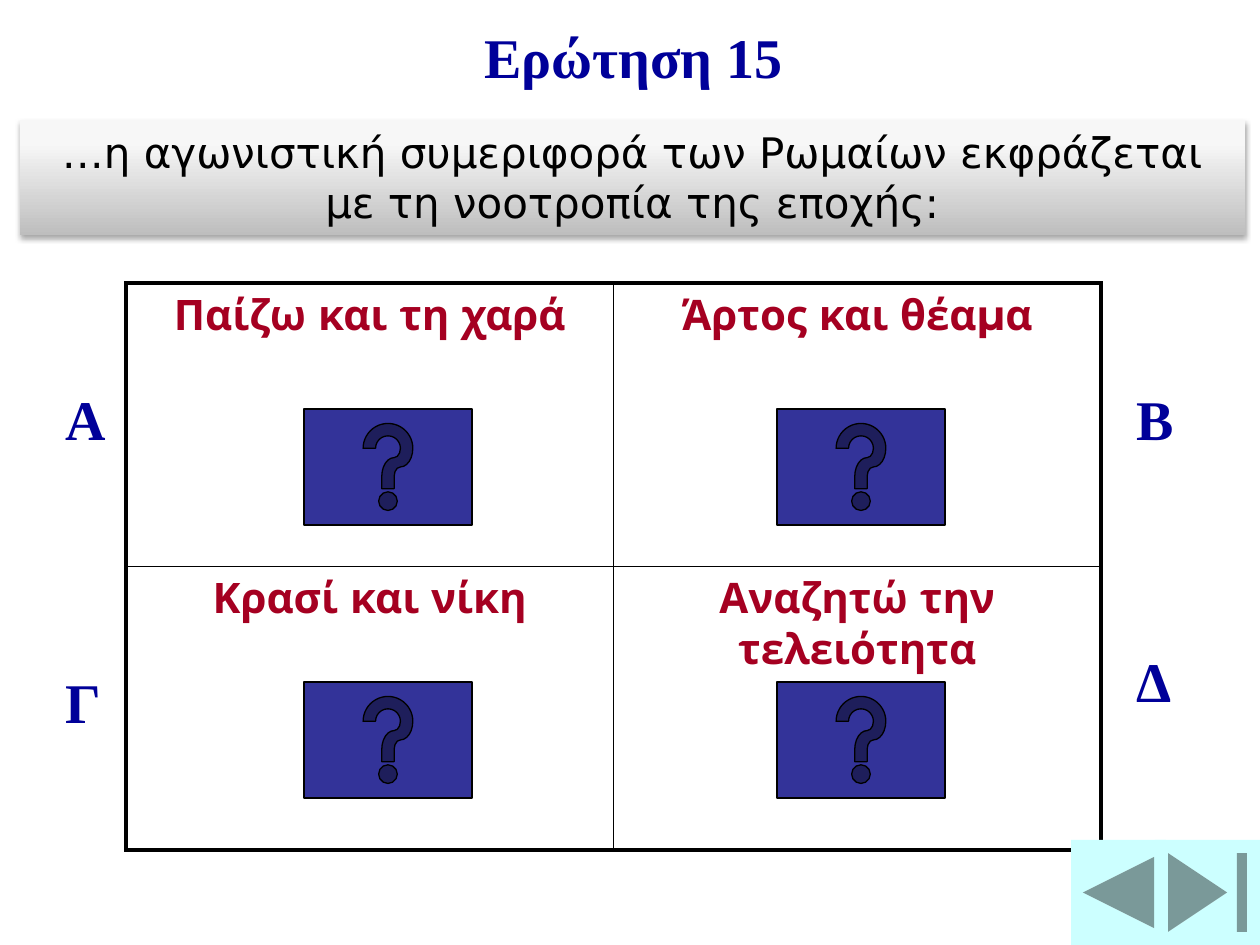
import lxml.etree
import pptx
import pptx.dml.color
import pptx.enum.shapes
import pptx.enum.text
import pptx.oxml
import pptx.oxml.ns
import pptx.util

EMU_PER_PX = 914400 / 126
COLORS = {
    "navy": "000099", "crimson": "A50021", "indigo": "333399",
    "aqua": "CCFFFF", "black": "000000", "white": "FFFFFF",
}
BANNER_STOPS = [(0, "BEBEBE"), (80, "F7F7F7"), (100, "F8F8F8")]
ANSWERS = [
    ["Παίζω και τη χαρά", "Άρτος και θέαμα"],
    ["Κρασί και νίκη", "Αναζητώ την τελειότητα"],
]
LETTERS = [("Α", 53, 378), ("Γ", 53, 661), ("Β", 1124, 378), ("Δ", 1124, 640)]
SHAPES = pptx.enum.shapes.MSO_SHAPE
CENTER = pptx.enum.text.PP_ALIGN.CENTER


def px(*lengths):
    return [pptx.util.Emu(round(length * EMU_PER_PX)) for length in lengths]


def rgb(name):
    return pptx.dml.color.RGBColor.from_string(COLORS[name])


def write(frame, text, font, size, color, bold=False, align=None):
    frame.text = text
    para = frame.paragraphs[0]
    para.alignment = align
    span = para.runs[0]
    span.font.name = font
    span.font.size = pptx.util.Pt(size)
    span.font.bold = bold
    span.font.color.rgb = rgb(color)


def add_heading(page, text, *place):
    frame = page.shapes.add_textbox(*px(*place)).text_frame
    frame.word_wrap = True
    write(frame, text, "Times New Roman", 32, "navy", bold=True)


def add_button(page, kind, fill, place, outlined=False):
    button = page.shapes.add_shape(kind, *px(*place))
    button.shadow.inherit = False
    button.fill.solid()
    button.fill.fore_color.rgb = rgb(fill)
    if outlined:
        button.line.color.rgb = rgb("black")
        button.line.width = pptx.util.Pt(0.75)
    else:
        button.line.fill.background()


def set_borders(cell, widths):
    """Draw the cell's sides; widths maps L, R, T, B, in that order, to points."""
    properties = cell._tc.get_or_add_tcPr()
    for index, (side, width) in enumerate(widths.items()):
        border = pptx.oxml.parse_xml(
            f'<a:ln{side} {pptx.oxml.ns.nsdecls("a")} w="{pptx.util.Pt(width)}">'
            f'<a:solidFill><a:srgbClr val="{COLORS["black"]}"/></a:solidFill>'
            f'</a:ln{side}>')
        properties.insert(index, border)


def add_answer_table(page):
    table = page.shapes.add_table(2, 2, *px(126, 283, 975, 567)).table
    table.first_row = False
    table.horz_banding = False
    outer, inner = 2.25, 1
    for row, answers in enumerate(ANSWERS):
        for column, answer in enumerate(answers):
            cell = table.cell(row, column)
            cell.fill.solid()
            cell.fill.fore_color.rgb = rgb("white")
            write(cell.text_frame, answer, "Montserrat", 24, "crimson",
                  bold=True, align=CENTER)
            set_borders(cell, {
                "L": inner if column else outer,
                "R": outer if column else inner,
                "T": inner if row else outer,
                "B": outer if row else inner,
            })


def add_banner(page, text, *place):
    """Add the question on a grey gradient bar with a soft shadow."""
    banner = page.shapes.add_shape(SHAPES.RECTANGLE, *px(*place))
    banner.line.fill.background()
    banner.fill.gradient()
    banner.fill.gradient_angle = 90
    stops = banner._element.spPr.find(".//" + pptx.oxml.ns.qn("a:gsLst"))
    for stop in list(stops):
        stops.remove(stop)
    for percent, color in BANNER_STOPS:
        stop = lxml.etree.SubElement(
            stops, pptx.oxml.ns.qn("a:gs"), pos=str(percent * 1000))
        lxml.etree.SubElement(stop, pptx.oxml.ns.qn("a:srgbClr"), val=color)
    banner.shadow.inherit = False
    effects = banner._element.spPr.find(pptx.oxml.ns.qn("a:effectLst"))
    effects.append(pptx.oxml.parse_xml(
        f'<a:outerShdw {pptx.oxml.ns.nsdecls("a")} blurRad="40000" dist="23000" '
        f'dir="5400000" rotWithShape="0"><a:srgbClr val="{COLORS["black"]}">'
        '<a:alpha val="35000"/></a:srgbClr></a:outerShdw>'))
    frame = banner.text_frame
    frame.word_wrap = True
    frame.vertical_anchor = pptx.enum.text.MSO_ANCHOR.TOP
    write(frame, text, "DejaVu Sans", 24, "black", align=CENTER)


def main():
    deck = pptx.Presentation()
    deck.slide_width, deck.slide_height = px(1260, 945)
    page = deck.slides.add_slide(deck.slide_layouts[6])
    add_answer_table(page)
    for letter, left, top in LETTERS:
        add_heading(page, letter, left, top, 63, 80)
    add_heading(page, "Ερώτηση 15", 472, 16, 336, 80)
    for top in (409, 682):
        for left in (304, 777):
            add_button(page, SHAPES.ACTION_BUTTON_HELP, "indigo",
                       (left, top, 168, 116), outlined=True)
    add_button(page, SHAPES.ACTION_BUTTON_END, "aqua", (1155, 840, 105, 105))
    add_button(page, SHAPES.ACTION_BUTTON_BACK_OR_PREVIOUS, "aqua",
               (1071, 840, 95, 105))
    add_banner(page, "…η αγωνιστική συμεριφορά των Ρωμαίων εκφράζεται "
               "με τη νοοτροπία της εποχής:", 20, 120, 1225, 115)
    deck.save("out.pptx")


if __name__ == "__main__":
    main()
